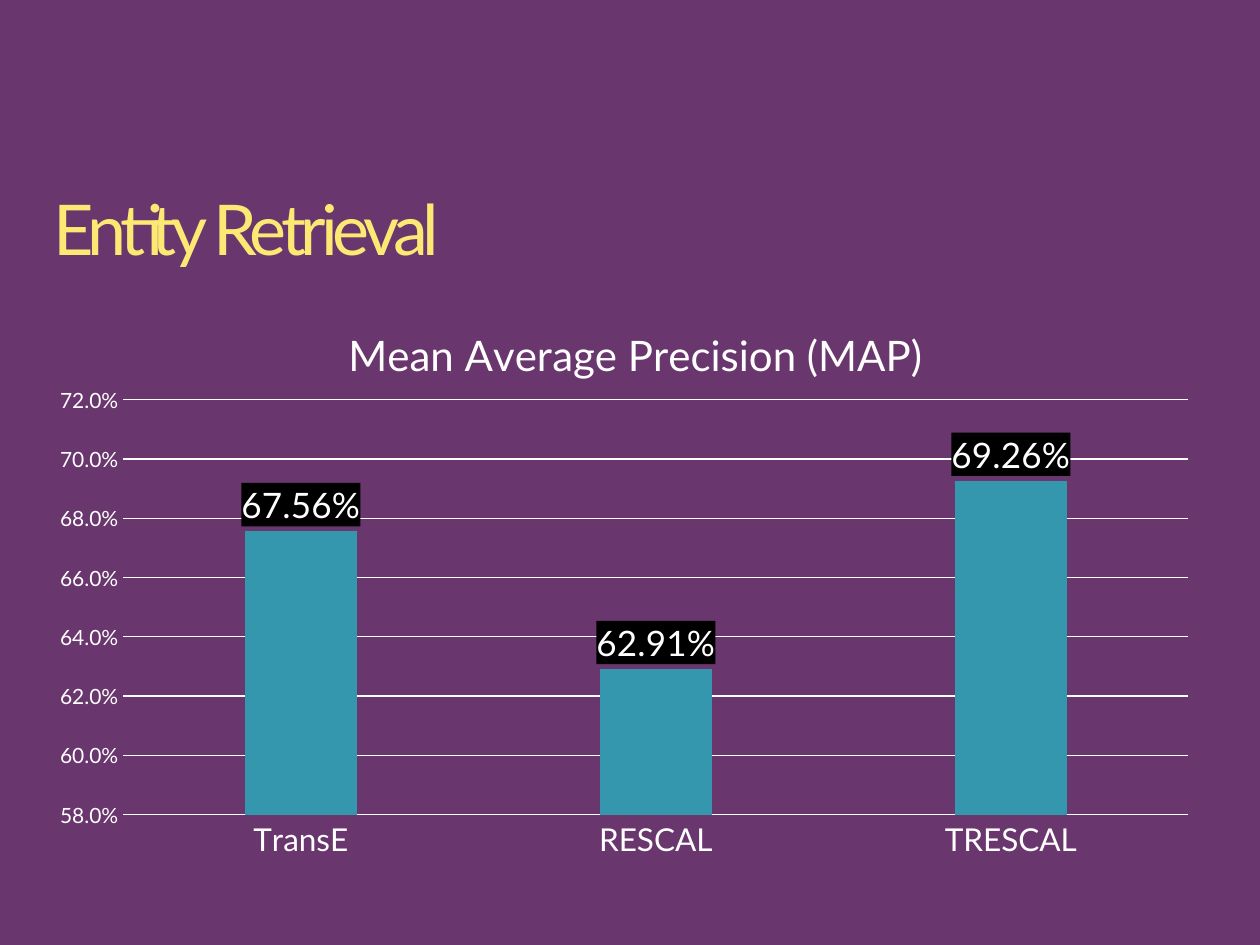
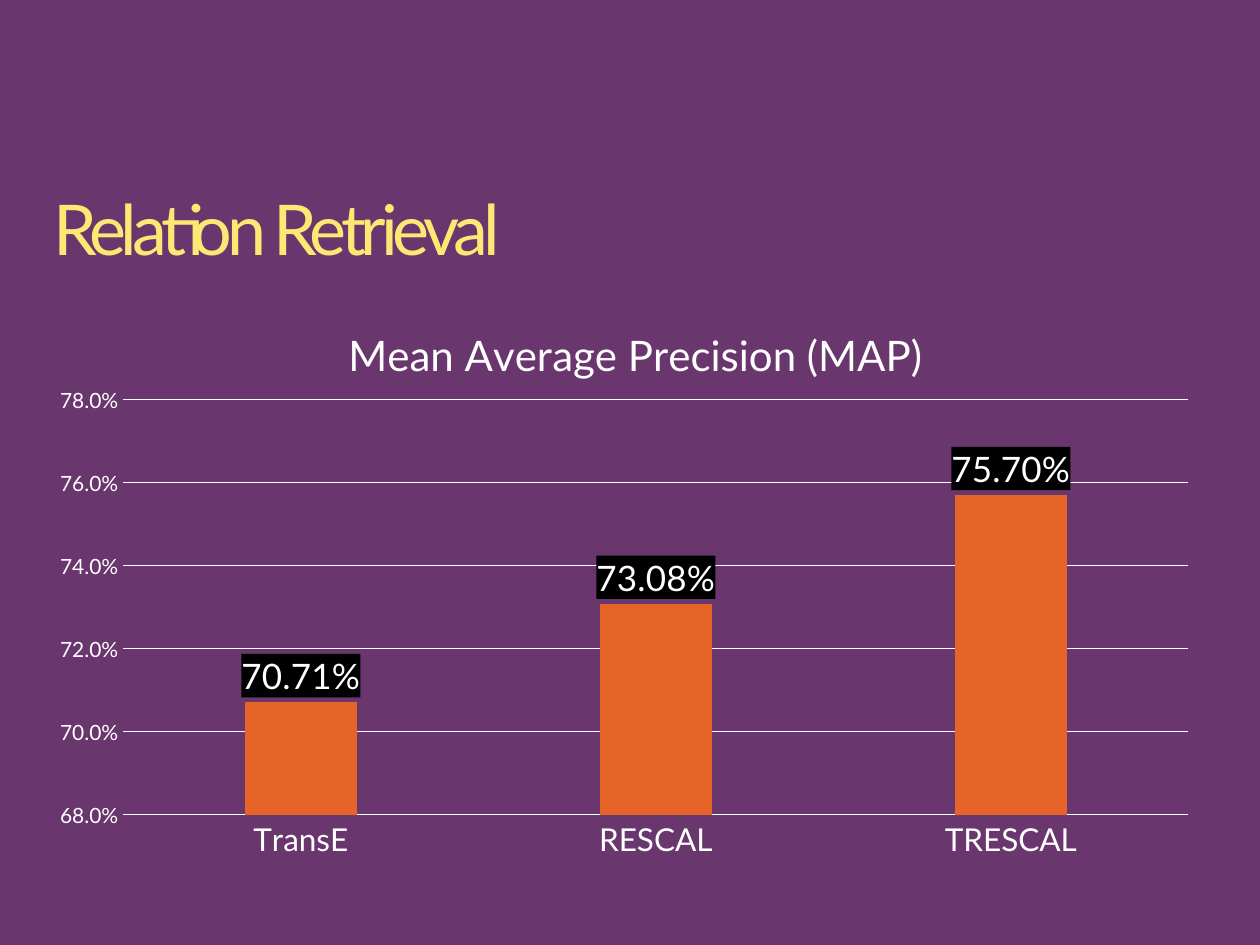
import dataclasses

import pptx
import pptx.chart.data
import pptx.dml.color
import pptx.enum.chart
import pptx.enum.text
import pptx.oxml
import pptx.oxml.ns
import pptx.util
from pptx.util import Cm, Pt


@dataclasses.dataclass(frozen=True)
class Theme:
    font: str = "Lato"
    background: str = "6A366E"
    title: str = "FCE974"
    text: str = "FFFFFF"
    label_fill: str = "000000"
    entity_bars: str = "3497AE"
    relation_bars: str = "E76429"
    title_size: int = 40
    chart_title_size: int = 24
    label_size: int = 20
    category_size: int = 18
    value_size: int = 12
    line_width: float = 0.75


THEME = Theme()
TITLE_ONLY_LAYOUT = 5
MODELS = ("TransE", "RESCAL", "TRESCAL")
CHART_TITLE = "Mean Average Precision (MAP)"


def rgb(color):
    return pptx.dml.color.RGBColor.from_string(color)


def format_font(font, size, color=THEME.text):
    font.name = THEME.font
    font.size = Pt(size)
    font.bold = False
    font.color.rgb = rgb(color)


def format_line(line):
    line.color.rgb = rgb(THEME.text)
    line.width = Pt(THEME.line_width)


def chart_xml(xml):
    """Parse a chart element, declaring the chart and drawing namespaces."""
    tag, rest = xml.split(">", 1)
    return pptx.oxml.parse_xml(f"{tag} {pptx.oxml.ns.nsdecls('c', 'a')}>{rest}")


def manual_layout(**settings):
    """Place a chart part by fractions of the chart's size."""
    entries = "".join(f'<c:{name} val="{value}"/>' for name, value in settings.items())
    return chart_xml(f"<c:layout><c:manualLayout>{entries}</c:manualLayout></c:layout>")


def add_title(slide, text):
    title = slide.shapes.title
    title.left, title.top, title.width, title.height = Cm(1.07), Cm(3.94), Cm(23.27), Cm(1.55)
    frame = title.text_frame
    frame.text = text
    frame.margin_left = frame.margin_right = frame.margin_top = frame.margin_bottom = 0
    frame.vertical_anchor = pptx.enum.text.MSO_ANCHOR.TOP
    frame.auto_size = pptx.enum.text.MSO_AUTO_SIZE.NONE
    paragraph = frame.paragraphs[0]
    paragraph.alignment = pptx.enum.text.PP_ALIGN.LEFT
    paragraph.line_spacing = 0.9
    run = paragraph.runs[0]
    format_font(run.font, THEME.title_size, THEME.title)
    run._r.get_or_add_rPr().set("spc", "-300")


def format_chart_title(chart):
    chart.has_title = True
    title = chart.chart_title
    title.text_frame.text = CHART_TITLE
    format_font(title.text_frame.paragraphs[0].runs[0].font, THEME.chart_title_size)
    title.include_in_layout = False
    element = title._element
    for layout in element.findall(pptx.oxml.ns.qn("c:layout")):
        element.remove(layout)
    element.find(pptx.oxml.ns.qn("c:tx")).addnext(
        manual_layout(xMode="edge", yMode="edge", x=0.26, y=0.04))


def format_axes(chart, minimum, maximum):
    no_ticks = pptx.enum.chart.XL_TICK_MARK.NONE
    for axis, size in ((chart.category_axis, THEME.category_size),
                       (chart.value_axis, THEME.value_size)):
        axis.major_tick_mark = axis.minor_tick_mark = no_ticks
        format_font(axis.tick_labels.font, size)
    format_line(chart.category_axis.format.line)
    values = chart.value_axis
    values.minimum_scale, values.maximum_scale = minimum, maximum
    values.major_unit = 0.02
    values.tick_labels.number_format = "0.0%"
    values.tick_labels.number_format_is_linked = False
    values.format.line.fill.background()
    values.has_major_gridlines = True
    format_line(values.major_gridlines.format.line)


def format_bars(plot, color):
    plot.gap_width = 219
    plot.overlap = -27
    plot.vary_by_categories = False
    series = plot.series[0]
    series.format.fill.solid()
    series.format.fill.fore_color.rgb = rgb(color)
    labels = series.data_labels
    labels.show_value = True
    labels.number_format = "0.00%"
    labels.number_format_is_linked = False
    labels.position = pptx.enum.chart.XL_LABEL_POSITION.OUTSIDE_END
    format_font(labels.font, THEME.label_size)
    labels._element.find(pptx.oxml.ns.qn("c:txPr")).addprevious(chart_xml(
        f'<c:spPr><a:solidFill><a:srgbClr val="{THEME.label_fill}"/></a:solidFill></c:spPr>'))


def add_precision_chart(slide, values, minimum, maximum, color):
    data = pptx.chart.data.CategoryChartData(number_format="0.00%")
    data.categories = MODELS
    data.add_series("Series 1", values)
    chart = slide.shapes.add_chart(
        pptx.enum.chart.XL_CHART_TYPE.COLUMN_CLUSTERED,
        Cm(0.71), Cm(5.92), Cm(23.7), Cm(11.61), data).chart
    chart.has_legend = False
    format_font(chart.font, 10)
    format_chart_title(chart)
    format_axes(chart, minimum, maximum)
    format_bars(chart.plots[0], color)
    plot_area = chart._chartSpace.chart.plotArea
    for layout in plot_area.findall(pptx.oxml.ns.qn("c:layout")):
        plot_area.remove(layout)
    plot_area.insert(0, manual_layout(layoutTarget="inner", xMode="edge", yMode="edge",
                                      x=0.075, y=0.184, w=0.906, h=0.721))


def add_retrieval_slide(presentation, title, values, minimum, maximum, color):
    slide = presentation.slides.add_slide(presentation.slide_layouts[TITLE_ONLY_LAYOUT])
    add_title(slide, title)
    add_precision_chart(slide, values, minimum, maximum, color)


def main():
    presentation = pptx.Presentation()
    presentation.slide_width, presentation.slide_height = Cm(25.4), Cm(19.05)
    background = presentation.slide_master.background.fill
    background.solid()
    background.fore_color.rgb = rgb(THEME.background)
    add_retrieval_slide(presentation, "Entity Retrieval", (0.6756, 0.6291, 0.6926),
                        0.58, 0.72, THEME.entity_bars)
    add_retrieval_slide(presentation, "Relation Retrieval", (0.7071, 0.7308, 0.757),
                        0.68, 0.78, THEME.relation_bars)
    presentation.save("out.pptx")


if __name__ == "__main__":
    main()
